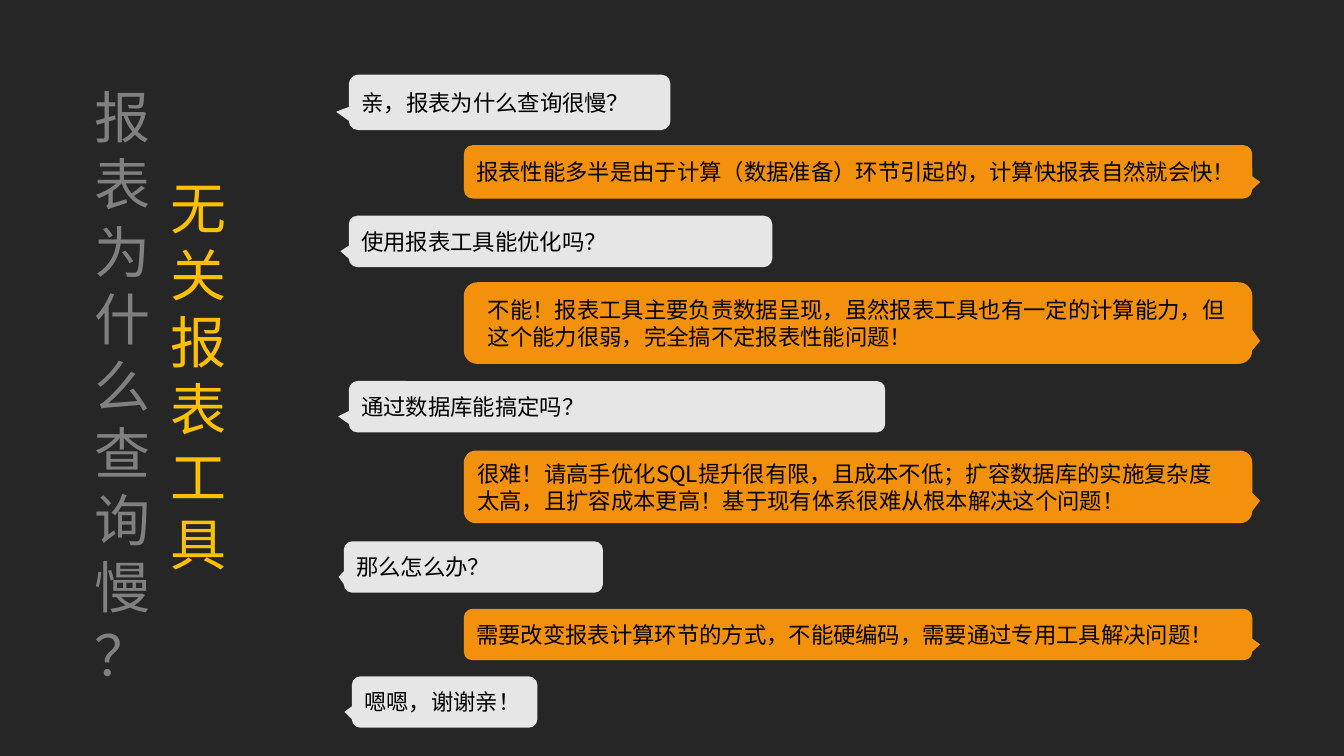
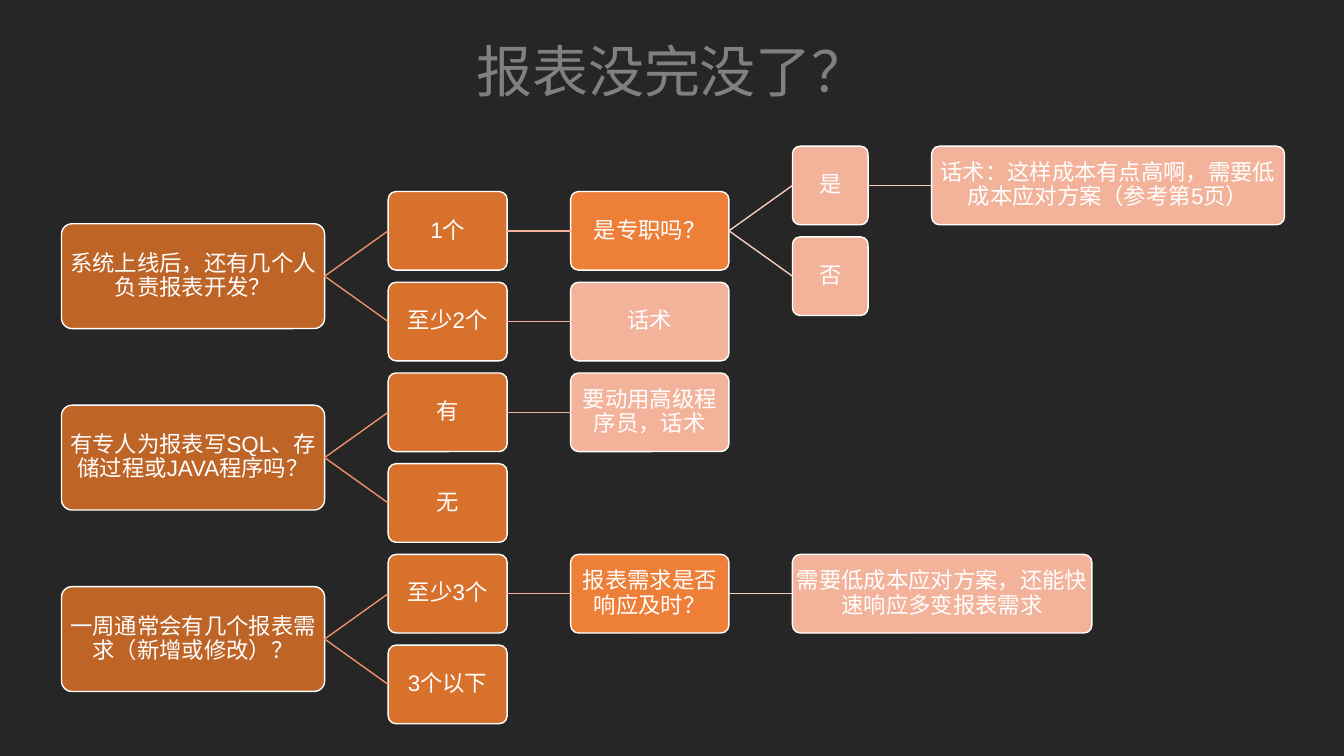
from lxml import etree
from pptx import Presentation
from pptx.dml.color import RGBColor
from pptx.enum.shapes import MSO_CONNECTOR, MSO_SHAPE
from pptx.enum.text import MSO_ANCHOR, MSO_AUTO_SIZE, PP_ALIGN
from pptx.oxml.ns import qn
from pptx.util import Inches, Pt

CALLOUT = MSO_SHAPE.ROUNDED_RECTANGULAR_CALLOUT
ROUNDED = MSO_SHAPE.ROUNDED_RECTANGLE
STRAIGHT = MSO_CONNECTOR.STRAIGHT
LEFT, CENTER = PP_ALIGN.LEFT, PP_ALIGN.CENTER
TOP, MIDDLE = MSO_ANCHOR.TOP, MSO_ANCHOR.MIDDLE

BACKGROUND = RGBColor(0x26, 0x26, 0x26)
TITLE_GRAY = RGBColor(0x80, 0x80, 0x80)
GOLD = RGBColor(0xFF, 0xC0, 0x00)
BLACK = RGBColor(0, 0, 0)
WHITE = RGBColor(0xFF, 0xFF, 0xFF)
ASK_FILL = RGBColor(0xE7, 0xE6, 0xE6)
REPLY_FILL = RGBColor(0xF4, 0x91, 0x0C)
PALE = RGBColor(0xF3, 0xB2, 0x9A)
LEVEL_FILLS = [RGBColor(0xBE, 0x64, 0x27), RGBColor(0xD7, 0x71, 0x2C),
               RGBColor(0xED, 0x7F, 0x39), PALE, PALE]
LINK_FAINT = RGBColor(0xF6, 0xCC, 0xBE)
# Colour of the link that leads into each level below the root
LINK_COLORS = [None, RGBColor(0xEF, 0x91, 0x66), PALE, LINK_FAINT, LINK_FAINT]

CJK_FONT = "Noto Sans CJK SC"
LATIN_FONT = "Arial"

# Bubbles: left, top, width, height, tail x, tail y, text, left and right inset
REPLY_X, REPLY_W = 4.6, 7.82
QUESTIONS = [
    (3.46, 0.74, 3.19, 0.55, -0.54, 0.17, "亲，报表为什么查询很慢？"),
    (3.46, 2.14, 4.2, 0.51, -0.52, 0.19, "使用报表工具能优化吗？"),
    (3.46, 3.78, 5.32, 0.51, -0.52, 0.19, "通过数据库能搞定吗？"),
    (3.41, 5.37, 2.57, 0.51, -0.52, 0.19, "那么怎么办？"),
    (3.49, 6.71, 1.84, 0.51, -0.54, 0.19, "嗯嗯，谢谢亲！"),
]
REPLIES = [
    (REPLY_X, 1.44, REPLY_W, 0.53, 0.51, 0.19,
     "报表性能多半是由于计算（数据准备）环节引起的，计算快报表自然就会快！"),
    (REPLY_X, 2.8, REPLY_W, 0.81, 0.51, 0.22,
     "不能！报表工具主要负责数据呈现，虽然报表工具也有一定的计算能力，"
     "但这个能力很弱，完全搞不定报表性能问题！", 0.2, 0.2),
    (REPLY_X, 4.47, REPLY_W, 0.72, 0.51, 0.19,
     "很难！请高手优化SQL提升很有限，且成本不低；扩容数据库的实施复杂度太高，"
     "且扩容成本更高！基于现有体系很难从根本解决这个问题！", 0.1, 0.2),
    (REPLY_X, 6.04, REPLY_W, 0.51, 0.51, 0.19,
     "需要改变报表计算环节的方式，不能硬编码，需要通过专用工具解决问题！"),
]

# Tree nodes: text, width, children
ROOT_W, ANSWER_W, FOLLOW_W, CHOICE_W = 2.61, 1.18, 1.57, 0.75
NODE_H, ROOT_H, NODE_GAP, ROW_PITCH = 0.78, 1.04, 0.63, 0.9
TREES = [
    ("系统上线后，还有几个人负责报表开发？", ROOT_W, [
        ("1个", ANSWER_W, [
            ("是专职吗？", FOLLOW_W, [
                ("是", CHOICE_W, [
                    ("话术：这样成本有点高啊，需要低成本应对方案（参考第5页）", 3.5, [])]),
                ("否", CHOICE_W, [])])]),
        ("至少2个", ANSWER_W, [("话术", FOLLOW_W, [])])]),
    ("有专人为报表写SQL、存储过程或JAVA程序吗？", ROOT_W, [
        ("有", ANSWER_W, [("要动用高级程序员，话术", FOLLOW_W, [])]),
        ("无", ANSWER_W, [])]),
    ("一周通常会有几个报表需求（新增或修改）？", ROOT_W, [
        ("至少3个", ANSWER_W, [
            ("报表需求是否响应及时？", FOLLOW_W, [
                ("需要低成本应对方案，还能快速响应多变报表需求", 2.97, [])])]),
        ("3个以下", ANSWER_W, [])]),
]


def write(sp, text, size, color, font=CJK_FONT, align=CENTER, anchor=MIDDLE,
          insets=(0.1, 0.05, 0.1, 0.05), wrap=True, spacing=1.0):
    tf = sp.text_frame
    tf.text = text
    tf.word_wrap = wrap
    tf.auto_size = MSO_AUTO_SIZE.NONE
    tf.vertical_anchor = anchor
    (tf.margin_left, tf.margin_top,
     tf.margin_right, tf.margin_bottom) = map(Inches, insets)
    p = tf.paragraphs[0]
    p.alignment = align
    p.line_spacing = spacing
    r = p.runs[0]
    r.font.size = Pt(size)
    r.font.name = font
    r.font.color.rgb = color
    ea = etree.SubElement(r.font._element, qn("a:ea"))
    ea.set("typeface", CJK_FONT)


def add_panel(s, kind, box, fill):
    sp = s.shapes.add_shape(kind, *map(Inches, box))
    sp.shadow.inherit = False
    sp.fill.solid()
    sp.fill.fore_color.rgb = fill
    return sp


def add_titled_slide(prs, title, box, wrap):
    s = prs.slides.add_slide(prs.slide_layouts.get_by_name("Title Only"))
    sp = s.shapes.title
    sp.left, sp.top, sp.width, sp.height = map(Inches, box)
    write(sp, title, 40, TITLE_GRAY, anchor=TOP, wrap=wrap)
    return s


def add_bubble(s, fill, x, y, w, h, tail_x, tail_y, text, left=0.1, right=0.05):
    sp = add_panel(s, CALLOUT, (x, y, w, h), fill)
    sp.line.fill.background()
    sp.adjustments[0], sp.adjustments[1] = tail_x, tail_y
    write(sp, text, 16, BLACK, align=LEFT, insets=(left, 0, right, 0))


def add_link(s, parent, child, color):
    line = s.shapes.add_connector(STRAIGHT, 0, 0, 0, 0)
    line.begin_connect(parent, 3)
    line.end_connect(child, 1)
    line.line.color.rgb = color
    line.line.width = Pt(1)
    etree.SubElement(line._element.spPr, qn("a:effectLst"))


def add_tree(s, node, x, center_y, level=0):
    """Draw a node and its descendants to the right; return the node's shape."""
    text, width, children = node
    height = NODE_H if level else ROOT_H
    fill = PALE if level > 1 and not children else LEVEL_FILLS[level]
    sp = add_panel(s, ROUNDED, (x, center_y - height / 2, width, height), fill)
    sp.adjustments[0] = 0.1
    sp.line.color.rgb = WHITE
    sp.line.width = Pt(1)
    write(sp, text, 16, WHITE, LATIN_FONT, insets=(0.01,) * 4, spacing=0.9)
    first_y = center_y - (len(children) - 1) * ROW_PITCH / 2
    for i, child in enumerate(children):
        child_sp = add_tree(s, child, x + width + NODE_GAP,
                            first_y + i * ROW_PITCH, level + 1)
        add_link(s, sp, child_sp, LINK_COLORS[level + 1])
    return sp


def build_chat_slide(prs):
    s = add_titled_slide(prs, "报表为什么查询慢？", (0.84, 0.77, 0.59, 6.16), True)
    subtitle = s.shapes.add_textbox(*map(Inches, (1.59, 1.67, 0.59, 4.14)))
    write(subtitle, "无关报表工具", 40, GOLD, anchor=TOP)
    for fill, bubbles in ((ASK_FILL, QUESTIONS), (REPLY_FILL, REPLIES)):
        for bubble in bubbles:
            add_bubble(s, fill, *bubble)


def build_tree_slide(prs):
    s = add_titled_slide(prs, "报表没完没了？", (4.6, 0.31, 4.13, 0.77), False)
    for i, tree in enumerate(TREES):
        add_tree(s, tree, 0.61, 2.74 + i * 2 * ROW_PITCH)


def main():
    prs = Presentation()
    prs.slide_width, prs.slide_height = Inches(13.33), Inches(7.5)
    background = prs.slide_master.background.fill
    background.solid()
    background.fore_color.rgb = BACKGROUND
    build_chat_slide(prs)
    build_tree_slide(prs)
    prs.save("out.pptx")


if __name__ == "__main__":
    main()
